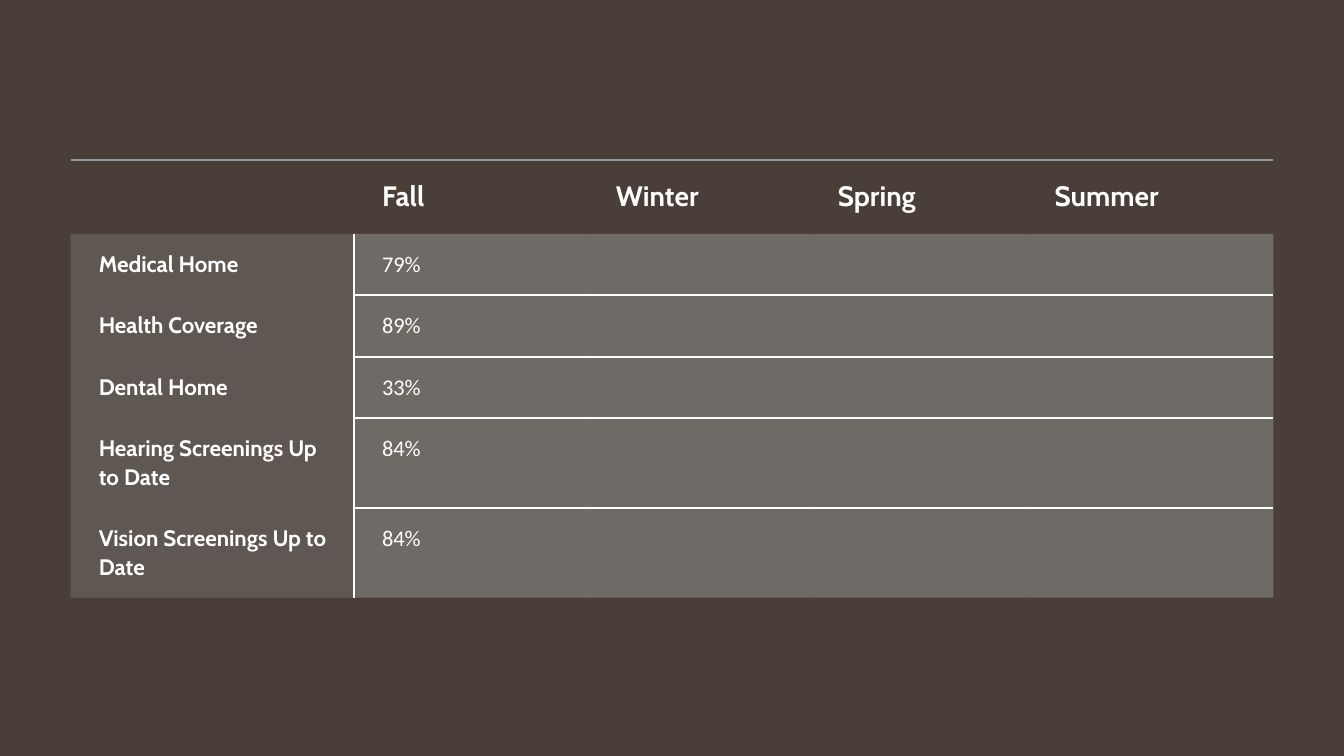
from lxml import etree
from pptx import Presentation
from pptx.dml.color import RGBColor
from pptx.oxml.ns import qn
from pptx.util import Inches, Pt

THEME = {
    "background": "4A3F38",
    "text": "FFFFFF",
    "rule": "FFFFFF",
    "top_rule": "8F9A9D",
    "cell": "B4BCBE",
    "label_opacity": 20,
    "value_opacity": 35,
    "top_rule_opacity": 60,
    "rule_width": 1.5,
    "heading": {"name": "Cabin", "size": Pt(20), "bold": True},
    "label": {"name": "Cabin", "size": Pt(16), "bold": True},
    "value": {"name": "Calibri", "size": Pt(16), "bold": False},
}

SEASONS = ["", "Fall", "Winter", "Spring", "Summer"]
SCREENINGS = [
    ("Medical Home", "79%"),
    ("Health Coverage", "89%"),
    ("Dental Home", "33%"),
    ("Hearing Screenings Up to Date", "84%"),
    ("Vision Screenings Up to Date", "84%"),
]
COLUMN_WIDTHS = [2.81, 2.32, 2.2, 2.15, 2.45]
ROW_HEIGHTS = [0.73, 0.61, 0.61, 0.61, 0.89, 0.89]
LAST_ROW = len(SCREENINGS)


def set_opacity(parent, percent):
    color = parent.find(f"{qn('a:solidFill')}/{qn('a:srgbClr')}")
    etree.SubElement(color, qn("a:alpha"), val=str(percent * 1000))


def add_border(cell, side, color, opacity=100):
    """Draw one side of a cell, or leave it bare when color is None."""
    properties = cell._tc.get_or_add_tcPr()
    width = Pt(THEME["rule_width"]) if color else 0
    line = etree.SubElement(properties, qn(f"a:ln{side}"), w=str(width))
    if color is None:
        etree.SubElement(line, qn("a:noFill"))
        return
    fill = etree.SubElement(line, qn("a:solidFill"))
    etree.SubElement(fill, qn("a:srgbClr"), val=color)
    if opacity < 100:
        set_opacity(line, opacity)


# Slide
presentation = Presentation()
presentation.slide_width = Inches(13.33)
presentation.slide_height = Inches(7.5)
slide = presentation.slides.add_slide(presentation.slide_layouts[6])
slide.background.fill.solid()
slide.background.fill.fore_color.rgb = RGBColor.from_string(THEME["background"])

# Table grid
table = slide.shapes.add_table(
    len(ROW_HEIGHTS), len(COLUMN_WIDTHS), Inches(0.7), Inches(1.59),
    Inches(sum(COLUMN_WIDTHS)), Inches(sum(ROW_HEIGHTS)),
).table
table.horz_banding = False
for column, width in zip(table.columns, COLUMN_WIDTHS):
    column.width = Inches(width)
for row, height in zip(table.rows, ROW_HEIGHTS):
    row.height = Inches(height)

# Cells
for row_index in range(len(ROW_HEIGHTS)):
    texts = SCREENINGS[row_index - 1] if row_index else SEASONS
    for column_index in range(len(COLUMN_WIDTHS)):
        cell = table.cell(row_index, column_index)
        is_heading = row_index == 0
        is_label = column_index == 0 and not is_heading
        is_value = column_index > 0 and not is_heading
        kind = "heading" if is_heading else "label" if is_label else "value"

        # Margins
        inset = Inches(0.17 if is_heading else 0.15)
        cell.margin_left = Inches(0.28)
        cell.margin_right = cell.margin_top = cell.margin_bottom = inset

        # Borders
        rules = {
            "L": is_value and column_index == 1,
            "R": is_label,
            "T": is_value and row_index > 1,
            "B": is_value and row_index < LAST_ROW,
        }
        for side, visible in rules.items():
            if is_heading and side == "T":
                add_border(cell, side, THEME["top_rule"], THEME["top_rule_opacity"])
            else:
                add_border(cell, side, THEME["rule"] if visible else None)

        # Fill
        if is_heading:
            cell.fill.background()
        else:
            cell.fill.solid()
            cell.fill.fore_color.rgb = RGBColor.from_string(THEME["cell"])
            set_opacity(cell._tc.tcPr, THEME[f"{kind}_opacity"])

        # Text
        if column_index < len(texts) and texts[column_index]:
            paragraph = cell.text_frame.paragraphs[0]
            paragraph.line_spacing = 1.07
            run = paragraph.add_run()
            run.text = texts[column_index]
            run.font.color.rgb = RGBColor.from_string(THEME["text"])
            for attribute, setting in THEME[kind].items():
                setattr(run.font, attribute, setting)

presentation.save("out.pptx")
